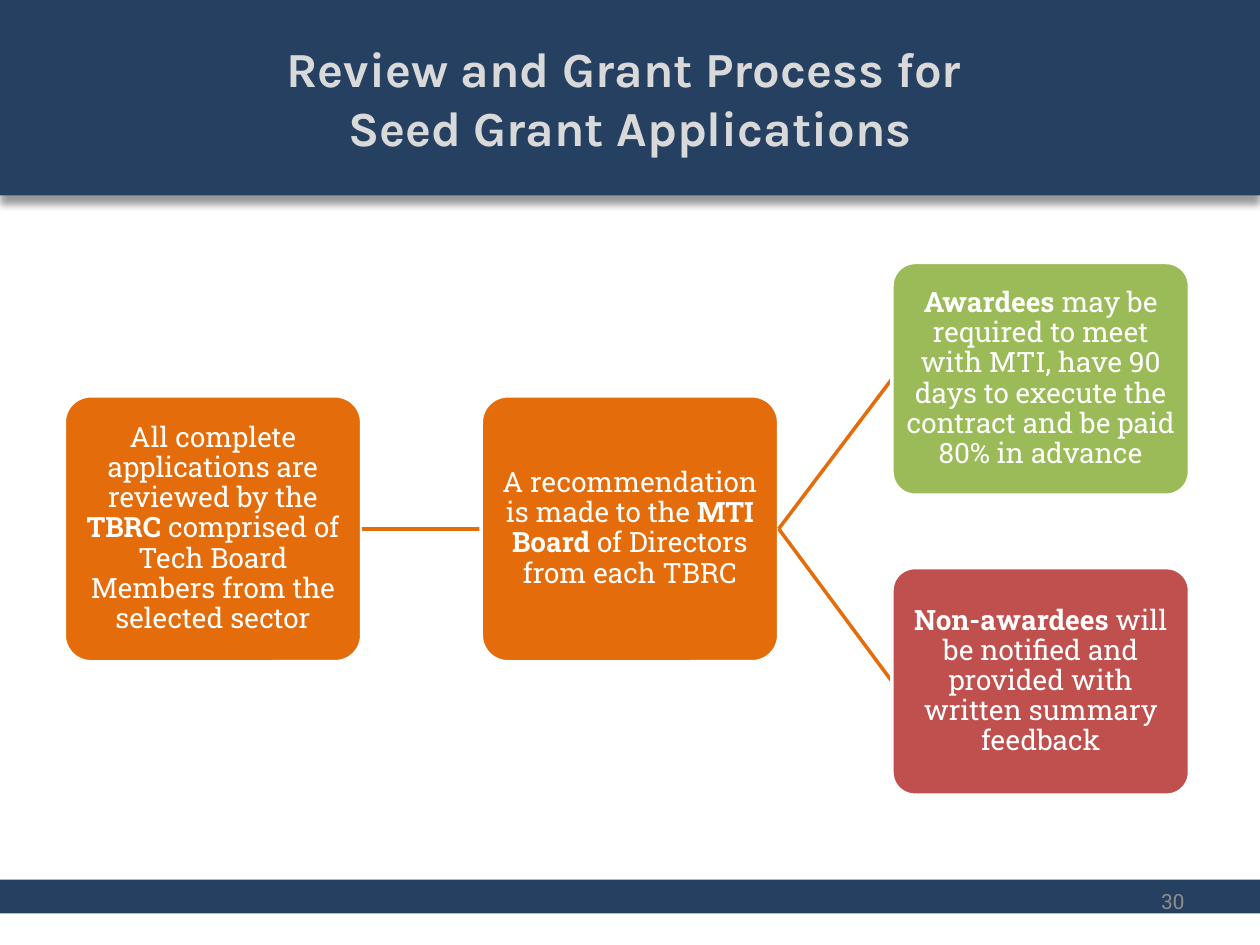
import pptx
import pptx.util
import pptx.dml.color
import pptx.enum.shapes
import pptx.enum.text
import pptx.oxml
import pptx.oxml.ns
import lxml.etree

Pt = pptx.util.Pt
SHAPES = pptx.enum.shapes.MSO_SHAPE
ALIGN = pptx.enum.text.PP_ALIGN

COLORS = {
    "navy": "254061",
    "title": "D9D9D9",
    "number": "8C8C8C",
    "step": "E46C0A",
    "awarded": "9BBB59",
    "declined": "C0504D",
    "white": "FFFFFF",
}
HEADING_FONT = "Karla"
BODY_FONT = "Roboto Slab"
TITLE_SHADOW = (
    f'<a:effectLst {pptx.oxml.ns.nsdecls("a")}>'
    '<a:outerShdw blurRad="50800" dist="63500" dir="5400000" rotWithShape="0">'
    '<a:srgbClr val="000000"><a:alpha val="40000"/></a:srgbClr>'
    "</a:outerShdw></a:effectLst>"
)


def rgb(name):
    """Return the named colour."""
    return pptx.dml.color.RGBColor.from_string(COLORS[name])


def add_block(slide, kind, box, fill):
    """Add a filled shape without outline or shadow."""
    shape = slide.shapes.add_shape(kind, *map(Pt, box))
    shape.shadow.inherit = False
    shape.fill.solid()
    shape.fill.fore_color.rgb = rgb(fill)
    shape.line.fill.background()
    return shape


def write_text(shape, runs, font, size, color, align=ALIGN.CENTER, spacing=1.0):
    """Write (text, bold) runs as one vertically centred paragraph."""
    frame = shape.text_frame
    frame.word_wrap = True
    frame.vertical_anchor = pptx.enum.text.MSO_ANCHOR.MIDDLE
    paragraph = frame.paragraphs[0]
    paragraph.alignment = align
    paragraph.line_spacing = spacing
    for index, (text, bold) in enumerate(runs):
        for number, line in enumerate(text.split("\n")):
            if number:
                paragraph.add_line_break()
            run = paragraph.add_run()
            run.text = line
            run.font.name = font
            run.font.size = Pt(size)
            run.font.bold = bold
            run.font.color.rgb = rgb(color)


def add_title(slide, box):
    """Add the title band with its soft shadow."""
    band = add_block(slide, SHAPES.RECTANGLE, box, "navy")
    properties = band._element.spPr
    properties.remove(properties.find(pptx.oxml.ns.qn("a:effectLst")))
    properties.append(pptx.oxml.parse_xml(TITLE_SHADOW))
    title = "Review and Grant Process for \nSeed Grant Applications"
    write_text(band, [(title, True)], HEADING_FONT, 28, "title")


def add_footer(slide, box):
    """Add the footer band and the page number near its right end."""
    left, top, width, height = box
    add_block(slide, SHAPES.RECTANGLE, box, "navy")
    number = slide.shapes.add_textbox(
        Pt(left + width - 203.8), Pt(top - 2.2), Pt(167.8), Pt(28.8))
    write_text(number, [("30", False)], BODY_FONT, 12, "number", ALIGN.RIGHT)


def add_step(slide, box, fill, runs):
    """Add one rounded step of the process."""
    step = add_block(slide, SHAPES.ROUNDED_RECTANGLE, box, fill)
    step.adjustments[0] = 0.1
    step.line.color.rgb = rgb("white")
    step.line.width = Pt(2)
    frame = step.text_frame
    frame.margin_left = frame.margin_right = Pt(0.8)
    frame.margin_top = frame.margin_bottom = Pt(0.8)
    write_text(step, runs, BODY_FONT, 16, "white", spacing=0.9)
    return step


def link_steps(slide, source, target):
    """Join the right side of one step to the left side of the next, beneath it."""
    connector = slide.shapes.add_connector(
        pptx.enum.shapes.MSO_CONNECTOR.STRAIGHT, 0, 0, 0, 0)
    connector.begin_connect(source, 3)
    connector.end_connect(target, 1)
    connector.line.color.rgb = rgb("step")
    connector.line.width = Pt(2)
    lxml.etree.SubElement(
        connector._element.spPr, pptx.oxml.ns.qn("a:effectLst"))
    target._element.addprevious(connector._element)


def add_process(slide, box):
    """Add the review, the recommendation and its two outcomes."""
    left, top, width, height = box
    step_width, step_height = 170, 152
    middle = top + (height - step_height) / 2
    outcome_left = left + width - step_width
    review = add_step(
        slide, (left, middle, step_width, step_height), "step",
        [("All complete applications are reviewed by the ", False),
         ("TBRC", True),
         (" comprised of Tech Board Members from the selected sector", False)])
    recommendation = add_step(
        slide, (left + 238.3, middle, step_width, step_height), "step",
        [("A recommendation is made to the ", False),
         ("MTI Board ", True),
         ("of Directors from each TBRC", False)])
    awardees = add_step(
        slide, (outcome_left, top, step_width, 133), "awarded",
        [("Awardees", True),
         (" may be required to meet with MTI, have 90 days to execute the "
          "contract and be paid 80% in advance", False)])
    others = add_step(
        slide, (outcome_left, top + height - 130, step_width, 130), "declined",
        [("Non-awardees", True),
         (" will be notified and provided with written summary feedback", False)])
    link_steps(slide, review, recommendation)
    for outcome in (awardees, others):
        link_steps(slide, recommendation, outcome)


def main():
    """Build and save the slide."""
    presentation = pptx.Presentation()
    presentation.slide_width = Pt(720)
    presentation.slide_height = Pt(540)
    slide = presentation.slides.add_slide(presentation.slide_layouts[6])
    add_footer(slide, (0, 502.6, 720, 19.4))
    add_title(slide, (0, 0, 720, 111.6))
    add_process(slide, (36.7, 150, 643, 304.4))
    presentation.save("out.pptx")


if __name__ == "__main__":
    main()
